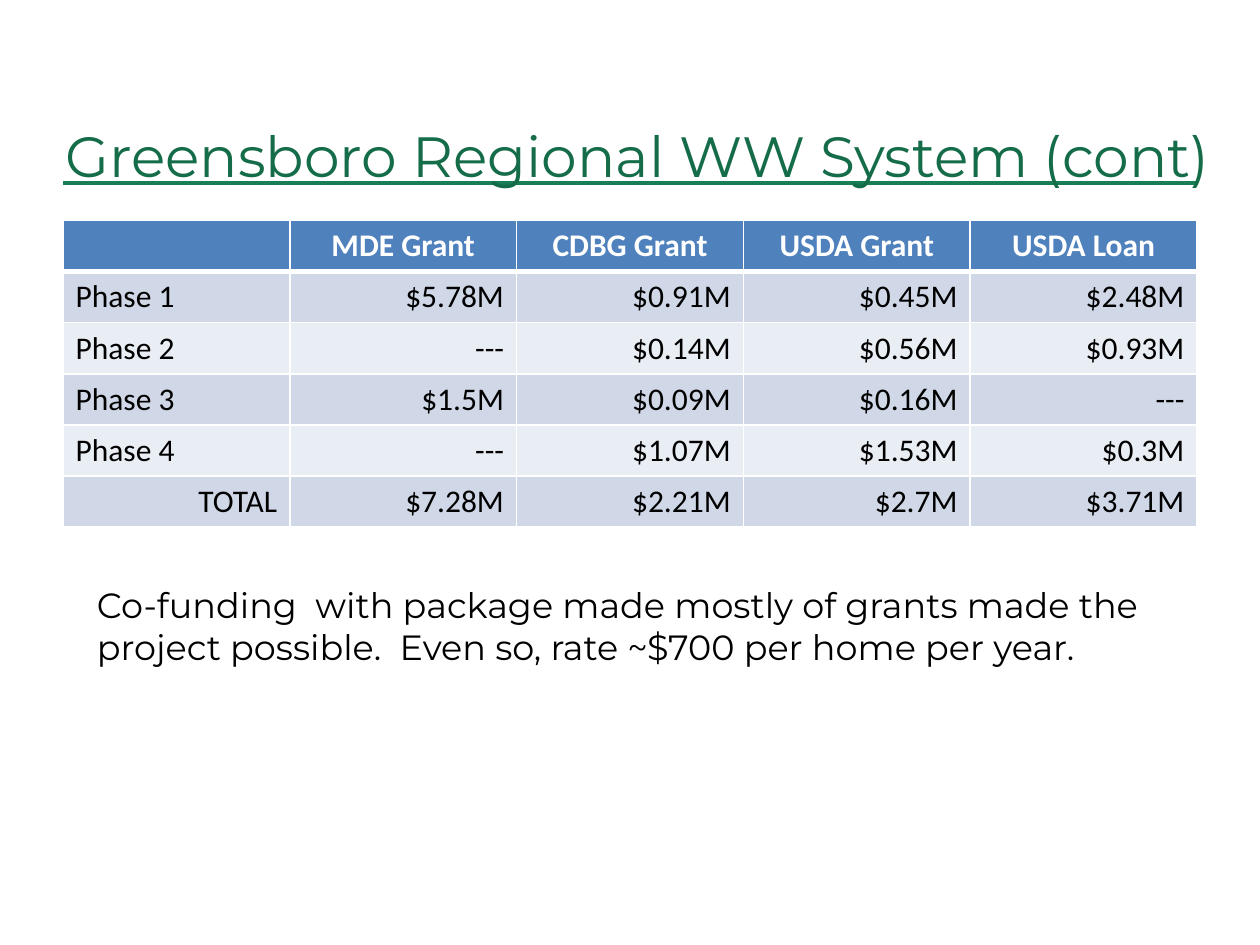
"""Build the Greensboro wastewater funding slide."""
from dataclasses import dataclass
from typing import Any

from lxml import etree
from pptx import Presentation
from pptx.dml.color import RGBColor
from pptx.enum.shapes import MSO_CONNECTOR
from pptx.enum.text import MSO_ANCHOR, MSO_AUTO_SIZE, PP_ALIGN
from pptx.oxml.ns import qn
from pptx.util import Inches, Pt

LEFT, CENTER, RIGHT = PP_ALIGN.LEFT, PP_ALIGN.CENTER, PP_ALIGN.RIGHT
STRAIGHT = MSO_CONNECTOR.STRAIGHT
TITLE_ONLY = 5


@dataclass(frozen=True)
class Theme:
    heading: str = "Montserrat"
    table: str = "Calibri"
    title: str = "156C48"
    rule: str = "187E55"
    header: str = "4F81BD"
    bands: tuple[str, str] = ("D0D8E8", "E9EDF4")
    white: str = "FFFFFF"
    black: str = "000000"
    title_size: float = 32.4
    table_size: float = 18
    note_size: float = 20
    rule_width: float = 2.25


@dataclass(frozen=True)
class Box:
    left: float
    top: float
    width: float
    height: float

    def emu(self) -> list[int]:
        return [Inches(v) for v in (self.left, self.top, self.width, self.height)]


@dataclass(frozen=True)
class Style:
    font: str
    size: float
    color: str
    align: Any = LEFT
    bold: bool = False


THEME = Theme()
TITLE = Box(0.42, 0.3, 9.33, 1.25)
GRID = Box(0.5, 1.75, 9, 2.43)
NOTE = Box(0.67, 4.58, 8.67, 0.77)
RULE_Y = 1.45
ROWS = [
    ("", "MDE Grant", "CDBG Grant", "USDA Grant", "USDA Loan"),
    ("Phase 1", "$5.78M", "$0.91M", "$0.45M", "$2.48M"),
    ("Phase 2", "---", "$0.14M", "$0.56M", "$0.93M"),
    ("Phase 3", "$1.5M", "$0.09M", "$0.16M", "---"),
    ("Phase 4", "---", "$1.07M", "$1.53M", "$0.3M"),
    ("TOTAL", "$7.28M", "$2.21M", "$2.7M", "$3.71M"),
]


def rgb(color: str) -> RGBColor:
    return RGBColor.from_string(color)


def write(tf: Any, text: str, style: Style) -> None:
    p = tf.paragraphs[0]
    p.alignment = style.align
    font = p.font
    if text:
        r = p.add_run()
        r.text = text
        font = r.font
    font.name, font.size, font.bold = style.font, Pt(style.size), style.bold
    font.color.rgb = rgb(style.color)


def border(cell: Any, header: bool, below_header: bool) -> None:
    pr = cell._tc.get_or_add_tcPr()
    widths = {"L": 1, "R": 1, "T": 3 if below_header else 1, "B": 3 if header else 1}
    for i, (side, width) in enumerate(widths.items()):
        ln = etree.Element(qn(f"a:ln{side}"), w=str(Pt(width)))
        fill = etree.SubElement(ln, qn("a:solidFill"))
        etree.SubElement(fill, qn("a:srgbClr"), val=THEME.white)
        pr.insert(i, ln)


def add_title(s: Any, text: str) -> None:
    sp = s.shapes.title
    sp.left, sp.top, sp.width, sp.height = TITLE.emu()
    tf = sp.text_frame
    tf.auto_size, tf.word_wrap = MSO_AUTO_SIZE.NONE, True
    tf.vertical_anchor = MSO_ANCHOR.BOTTOM
    write(tf, text, Style(THEME.heading, THEME.title_size, THEME.title))


def add_rule(s: Any) -> None:
    y = Inches(RULE_Y)
    ends = Inches(GRID.left), y, Inches(GRID.left + GRID.width), y
    line = s.shapes.add_connector(STRAIGHT, *ends)
    line.line.color.rgb = rgb(THEME.rule)
    line.line.width = Pt(THEME.rule_width)
    etree.SubElement(line._element.spPr, qn("a:effectLst"))
    s.shapes._spTree.insert(2, line._element)


def add_funding(s: Any) -> None:
    table = s.shapes.add_table(len(ROWS), len(ROWS[0]), *GRID.emu()).table
    for i, row in enumerate(ROWS):
        header = i == 0
        for j, text in enumerate(row):
            cell = table.cell(i, j)
            cell.fill.solid()
            cell.fill.fore_color.rgb = rgb(THEME.header if header else THEME.bands[(i - 1) % 2])
            border(cell, header, i == 1)
            label = j == 0 and text != "TOTAL"
            align = CENTER if header else LEFT if label else RIGHT
            color = THEME.white if header else THEME.black
            write(cell.text_frame, text,
                  Style(THEME.table, THEME.table_size, color, align, header))


def add_note(s: Any, text: str) -> None:
    tf = s.shapes.add_textbox(*NOTE.emu()).text_frame
    tf.word_wrap = True
    tf.auto_size = MSO_AUTO_SIZE.SHAPE_TO_FIT_TEXT
    write(tf, text, Style(THEME.heading, THEME.note_size, THEME.black))


def main() -> None:
    prs = Presentation()
    prs.slide_width, prs.slide_height = Inches(10), Inches(7.5)
    s = prs.slides.add_slide(prs.slide_layouts[TITLE_ONLY])
    add_title(s, "Greensboro Regional WW System (cont)")
    add_rule(s)
    add_funding(s)
    add_note(s, "Co-funding  with package made mostly of grants made the "
                "project possible.  Even so, rate ~$700 per home per year.")
    prs.save("out.pptx")


if __name__ == "__main__":
    main()
